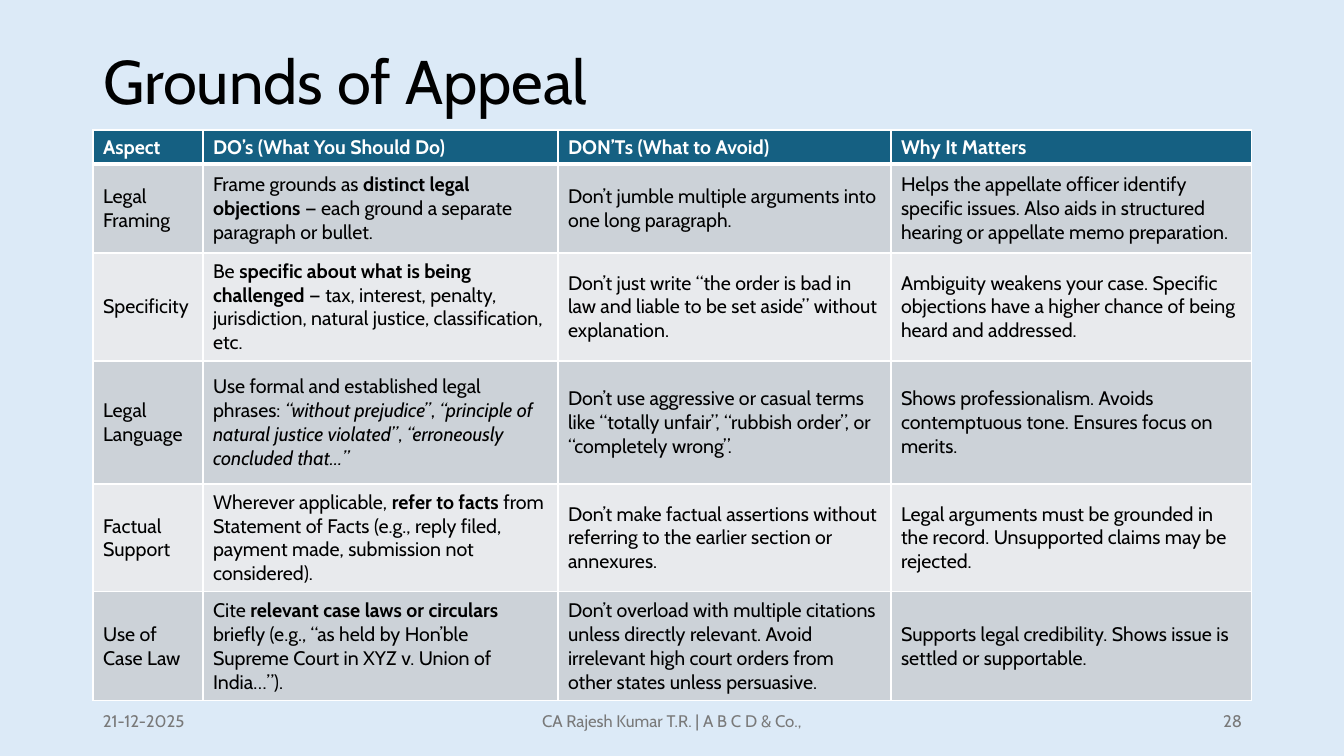
from pptx import Presentation
from pptx import util as u
from pptx.dml.color import RGBColor
from pptx.enum import text
from pptx.oxml import parse_xml
from pptx.oxml.ns import nsdecls

SCALE = 12192000 / 1344
FONT = "Cabin"
LEFT, WIDTH = 93, 1159
COLS = [110, 355, 333, 361]
ROWS = [34, 89, 108, 123, 108, 109]
HEAD, ODD, EVEN = "156082", "CCD2D8", "E8EAED"
ALIGN = text.PP_ALIGN

CELLS = [
    ["Aspect", "DO’s (What You Should Do)", "DON’Ts (What to Avoid)", "Why It Matters"],
    ["Legal Framing",
     "Frame grounds as *distinct legal objections* — each ground a separate paragraph or bullet.",
     "Don’t jumble multiple arguments into one long paragraph.",
     "Helps the appellate officer identify specific issues. Also aids in structured "
     "hearing or appellate memo preparation."],
    ["Specificity",
     "Be *specific about what is being challenged* — tax, interest, penalty, jurisdiction, "
     "natural justice, classification, etc.",
     "Don’t just write “the order is bad in law and liable to be set aside” without explanation.",
     "Ambiguity weakens your case. Specific objections have a higher chance of being "
     "heard and addressed."],
    ["Legal Language",
     "Use formal and established legal phrases: _“without prejudice”_, "
     "_“principle of natural justice violated”_, _“erroneously concluded that…”_",
     "Don’t use aggressive or casual terms like “totally unfair”, “rubbish order”, "
     "or “completely wrong”.",
     "Shows professionalism. Avoids contemptuous tone. Ensures focus on merits."],
    ["Factual Support",
     "Wherever applicable, *refer to facts* from Statement of Facts (e.g., reply filed, "
     "payment made, submission not considered).",
     "Don’t make factual assertions without referring to the earlier section or annexures.",
     "Legal arguments must be grounded in the record. Unsupported claims may be rejected."],
    ["Use of Case Law",
     "Cite *relevant case laws or circulars* briefly (e.g., “as held by Hon’ble "
     "Supreme Court in XYZ v. Union of India…”).",
     "Don’t overload with multiple citations unless directly relevant. Avoid irrelevant "
     "high court orders from other states unless persuasive.",
     "Supports legal credibility. Shows issue is settled or supportable."],
]


def px(n):
    return u.Emu(round(n * SCALE))


def color(code):
    return RGBColor.from_string(code)


def write(frame, words, size=14, tint="000000", bold=False, align=ALIGN.LEFT, space=None):
    frame.word_wrap = True
    para = frame.paragraphs[0]
    para.alignment = align
    para.line_spacing = space
    for i, chunk in enumerate(words.split("*")):
        for j, part in enumerate(chunk.split("_")):
            if part:
                run = para.add_run()
                run.text = part
                font = run.font
                font.name, font.size = FONT, u.Pt(size)
                font.bold = bold or i % 2 == 1
                font.italic = j % 2 == 1
                font.color.rgb = color(tint)


def border(cell, top, bottom):
    props = cell._tc.get_or_add_tcPr()
    for i, (side, width) in enumerate(zip("LRTB", (1, 1, top, bottom))):
        props.insert(i, parse_xml(
            f'<a:ln{side} {nsdecls("a")} w="{u.Pt(width)}"><a:solidFill>'
            f'<a:srgbClr val="FFFFFF"/></a:solidFill></a:ln{side}>'))


def title(slide, words):
    shape = slide.shapes.title
    shape.left, shape.top, shape.width, shape.height = map(px, (LEFT, 40, WIDTH, 90))
    frame = shape.text_frame
    frame.auto_size = text.MSO_AUTO_SIZE.NONE
    frame.vertical_anchor = text.MSO_ANCHOR.MIDDLE
    write(frame, words, size=44, space=0.9)


def table(slide):
    box = map(px, (LEFT, 130, sum(COLS), sum(ROWS)))
    grid = slide.shapes.add_table(len(ROWS), len(COLS), *box).table
    for col, width in zip(grid.columns, COLS):
        col.width = px(width)
    for r, (row, height) in enumerate(zip(grid.rows, ROWS)):
        row.height = px(height)
        for cell, words in zip(row.cells, CELLS[r]):
            cell.vertical_anchor = text.MSO_ANCHOR.MIDDLE
            cell.fill.solid()
            cell.fill.fore_color.rgb = color(HEAD if r == 0 else ODD if r % 2 else EVEN)
            border(cell, 3 if r == 1 else 1, 3 if r == 0 else 1)
            write(cell.text_frame, words, tint="000000" if r else "FFFFFF", bold=r == 0)


def footer(slide, words, left, width, align):
    frame = slide.shapes.add_textbox(*map(px, (left, 701, width, 40))).text_frame
    frame.vertical_anchor = text.MSO_ANCHOR.MIDDLE
    write(frame, words, size=12, tint="797979", align=align)


def main():
    deck = Presentation()
    deck.slide_width, deck.slide_height = px(1344), px(756)
    slide = deck.slides.add_slide(deck.slide_layouts[5])
    slide.background.fill.solid()
    slide.background.fill.fore_color.rgb = color("DCEAF7")
    title(slide, "Grounds of Appeal")
    table(slide)
    footer(slide, "21-12-2025", LEFT, 302, ALIGN.LEFT)
    footer(slide, "CA Rajesh Kumar T.R. | A B C D & Co.,", 445, 454, ALIGN.CENTER)
    footer(slide, "28", LEFT + WIDTH - 302, 302, ALIGN.RIGHT)
    deck.save("out.pptx")


if __name__ == "__main__":
    main()
